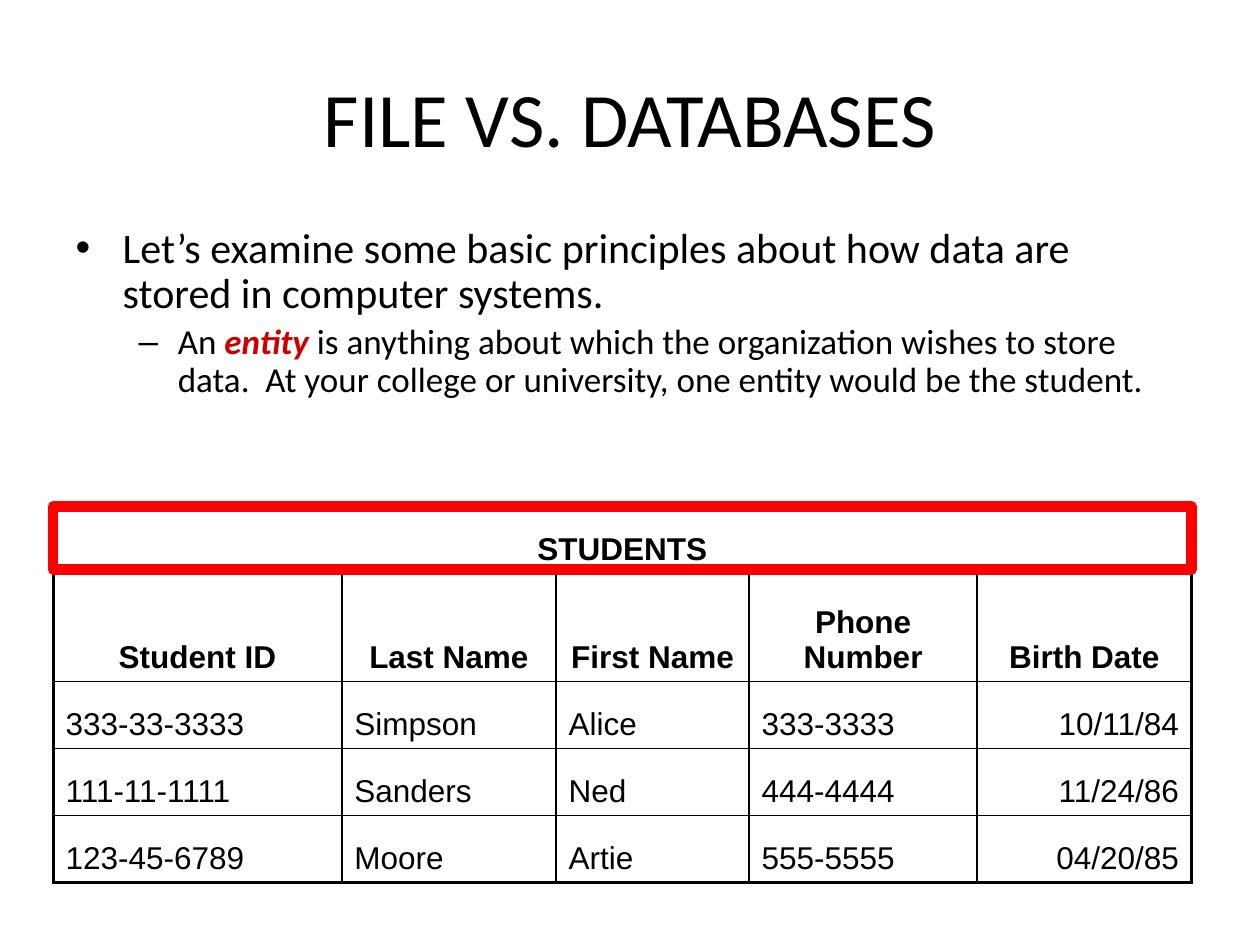
from collections import namedtuple

from pptx import Presentation
from pptx import util as u
from pptx.dml import color
from pptx.enum import shapes, text
from pptx.oxml import ns
from lxml import etree

Box = namedtuple("Box", "left top width height")
BLACK, RED, ACCENT = "000000", "FF0000", "CC0000"
COLUMN_WIDTHS = [5.82, 4.32, 3.89, 4.6, 4.32]
ROW_HEIGHTS = [1.35, 2.18, 1.35, 1.35, 1.35]
STUDENTS = [
    ["Student ID", "Last Name", "First Name", "Phone Number", "Birth Date"],
    ["333-33-3333", "Simpson", "Alice", "333-3333", "10/11/84"],
    ["111-11-1111", "Sanders", "Ned", "444-4444", "11/24/86"],
    ["123-45-6789", "Moore", "Artie", "555-5555", "04/20/85"],
]


def rgb(value):
    """Turn a hex string into a colour."""
    return color.RGBColor.from_string(value)


def add_run(paragraph, words, size, font="Calibri", hue=BLACK, bold=False, italic=False):
    """Add one formatted run to a paragraph."""
    run = paragraph.add_run()
    run.text = words
    run.font.name, run.font.size = font, u.Pt(size)
    run.font.bold, run.font.italic = bold, italic
    run.font.color.rgb = rgb(hue)


def place(shape, box):
    """Move a shape to a box given in centimetres."""
    shape.left, shape.top, shape.width, shape.height = map(u.Cm, box)


def fill_title(title, box):
    """Place and write the slide title."""
    place(title, box)
    frame = title.text_frame
    frame.auto_size = text.MSO_AUTO_SIZE.NONE
    frame.vertical_anchor = text.MSO_ANCHOR.MIDDLE
    paragraph = frame.paragraphs[0]
    paragraph.alignment = text.PP_ALIGN.CENTER
    add_run(paragraph, "FILE VS. DATABASES", 44)


def format_bullet(paragraph, level, mark, margin, hanging, before):
    """Set the level, bullet, indent and spacing of a list paragraph."""
    paragraph.level = level
    paragraph.line_spacing = 0.9
    paragraph.space_before = u.Pt(before)
    properties = paragraph._p.get_or_add_pPr()
    properties.set("marL", str(u.Cm(margin)))
    properties.set("indent", str(-u.Cm(hanging)))
    etree.SubElement(properties, ns.qn("a:buChar")).set("char", mark)


def fill_body(body, box):
    """Place and write the bulleted list."""
    place(body, box)
    frame = body.text_frame
    frame.auto_size = text.MSO_AUTO_SIZE.NONE
    principle = frame.paragraphs[0]
    format_bullet(principle, 0, "•", 0.95, 0.95, 4.8)
    add_run(principle, "Let’s examine some basic principles about how data are "
                       "stored in computer systems.", 24)
    definition = frame.add_paragraph()
    format_bullet(definition, 1, "–", 2.06, 0.79, 4)
    add_run(definition, "An ", 20)
    add_run(definition, "entity", 20, hue=ACCENT, bold=True, italic=True)
    add_run(definition, " is anything about which the organization wishes to store data.  "
                        "At your college or university, one entity would be the student.", 20)


def add_border(cell, side, width):
    """Draw one side of a cell in black."""
    line = etree.SubElement(cell._tc.get_or_add_tcPr(), ns.qn("a:ln" + side), w=str(u.Pt(width)))
    fill = etree.SubElement(line, ns.qn("a:solidFill"))
    etree.SubElement(fill, ns.qn("a:srgbClr"), val=BLACK)


def format_cell(cell, row, column):
    """Give a cell its borders, with a heavier table outline, and no fill."""
    outer = {"L": column == 0, "R": column == len(COLUMN_WIDTHS) - 1,
             "T": row == 0, "B": row == len(ROW_HEIGHTS) - 1}
    for side, heavy in outer.items():
        add_border(cell, side, 2 if heavy else 1)
    cell.fill.background()
    cell.vertical_anchor = text.MSO_ANCHOR.BOTTOM


def write_cell(cell, words, alignment, bold):
    """Write the text of a table cell."""
    paragraph = cell.text_frame.paragraphs[0]
    paragraph.alignment = alignment
    add_run(paragraph, words, 18, "Arial", bold=bold)


def add_students_table(slide, box):
    """Add the table of students with a merged heading row."""
    frame = slide.shapes.add_table(len(ROW_HEIGHTS), len(COLUMN_WIDTHS), *map(u.Cm, box))
    table = frame.table
    table.first_row = table.horz_banding = False
    for column, width in zip(table.columns, COLUMN_WIDTHS):
        column.width = u.Cm(width)
    for row, height in zip(table.rows, ROW_HEIGHTS):
        row.height = u.Cm(height)
    for row in range(len(ROW_HEIGHTS)):
        for column in range(len(COLUMN_WIDTHS)):
            format_cell(table.cell(row, column), row, column)
    heading = table.cell(0, 0)
    heading.merge(table.cell(0, len(COLUMN_WIDTHS) - 1))
    align = text.PP_ALIGN
    write_cell(heading, "STUDENTS", align.CENTER, True)
    for row, record in enumerate(STUDENTS, 1):
        for column, words in enumerate(record):
            is_date = column == len(record) - 1
            alignment = align.CENTER if row == 1 else align.RIGHT if is_date else align.LEFT
            write_cell(table.cell(row, column), words, alignment, row == 1)


def add_highlight(slide, box):
    """Outline a box in red."""
    shape = slide.shapes.add_shape(shapes.MSO_SHAPE.RECTANGLE, *map(u.Cm, box))
    shape.shadow.inherit = False
    shape.fill.background()
    shape.line.color.rgb = rgb(RED)
    shape.line.width = u.Pt(6)


def main():
    """Build and save the slide."""
    presentation = Presentation()
    presentation.slide_width, presentation.slide_height = u.Cm(25.4), u.Cm(19.05)
    slide = presentation.slides.add_slide(presentation.slide_layouts[1])
    fill_title(slide.shapes.title, Box(1.27, 0.76, 22.86, 3.18))
    fill_body(slide.placeholders[1], Box(1.27, 4.45, 22.86, 4.83))
    table_box = Box(1.07, 10.21, sum(COLUMN_WIDTHS), sum(ROW_HEIGHTS))
    add_students_table(slide, table_box)
    add_highlight(slide, table_box._replace(height=1.27))
    presentation.save("out.pptx")


if __name__ == "__main__":
    main()
